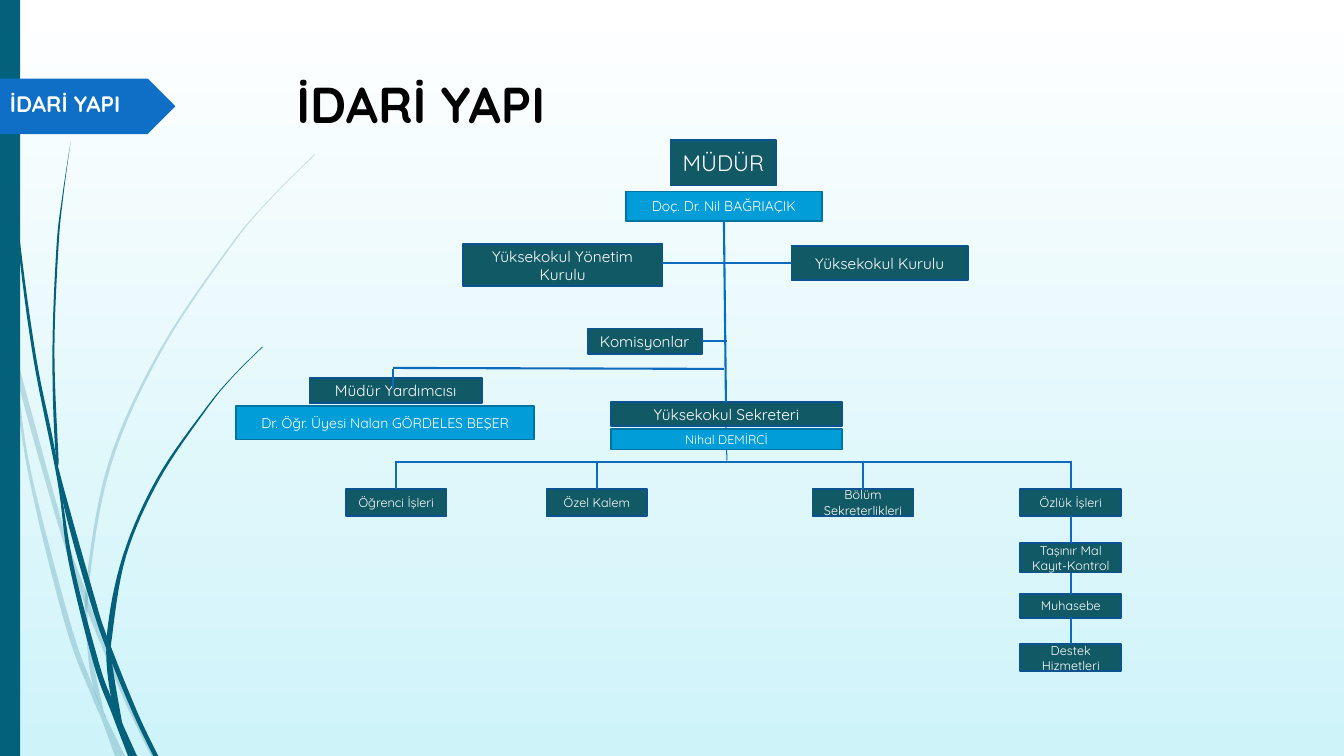
from lxml import etree
from pptx import Presentation
from pptx.dml.color import RGBColor
from pptx.enum.shapes import MSO_CONNECTOR, MSO_SHAPE
from pptx.enum.text import MSO_ANCHOR, PP_ALIGN
from pptx.oxml.ns import qn
from pptx.util import Inches, Pt

RECT, TAG = MSO_SHAPE.RECTANGLE, MSO_SHAPE.PENTAGON
STRAIGHT = MSO_CONNECTOR.STRAIGHT
MIDDLE, CENTER = MSO_ANCHOR.MIDDLE, PP_ALIGN.CENTER
FONT = "Quicksand"
WHITE = RGBColor(0xFF, 0xFF, 0xFF)
BLACK = RGBColor(0x00, 0x00, 0x00)
PALE_BLUE = RGBColor(0xCE, 0xF3, 0xF9)
TEAL = RGBColor(0x04, 0x61, 0x7B)
TAG_BLUE = RGBColor(0x0F, 0x6F, 0xC6)
UNIT_FILL = RGBColor(0x11, 0x59, 0x64)
UNIT_LINE = RGBColor(0x0B, 0x52, 0x92)
NAME_FILL = RGBColor(0x00, 0x9D, 0xD9)
NAME_LINE = RGBColor(0x00, 0x74, 0xA1)
TRUNK = RGBColor(0x00, 0x70, 0xC0)
BRANCH = RGBColor(0x0E, 0x6A, 0xBD)


def smooth(points, steps=8):
    """Return points of a Catmull-Rom curve through the given points, in EMU."""
    padded = [points[0], *points, points[-1]]
    curve = []
    for a, b, c, d in zip(padded, padded[1:], padded[2:], padded[3:]):
        for i in range(steps):
            t = i / steps
            curve.append(tuple(Inches(
                b[k] + t * (c[k] - a[k]) / 2
                + t * t * (2 * a[k] - 5 * b[k] + 4 * c[k] - d[k]) / 2
                + t ** 3 * (3 * b[k] - a[k] - 3 * c[k] + d[k]) / 2) for k in (0, 1)))
    return curve + [tuple(Inches(v) for v in points[-1])]


def add_box(kind, left, top, width, height, fill, line=None, text="", size=11):
    sp = slide.shapes.add_shape(kind, Inches(left), Inches(top), Inches(width), Inches(height))
    sp.shadow.inherit = False
    sp.fill.solid()
    sp.fill.fore_color.rgb = fill
    if line is None:
        sp.line.fill.background()
    else:
        sp.line.color.rgb = line
        sp.line.width = Pt(1.25)
    if text:
        tf = sp.text_frame
        tf.word_wrap = True
        tf.vertical_anchor = MIDDLE
        p = tf.paragraphs[0]
        p.text = text
        p.alignment = CENTER
        p.font.name, p.font.size, p.font.color.rgb = FONT, Pt(size), WHITE


prs = Presentation()
prs.slide_width, prs.slide_height = Inches(13.33), Inches(7.5)
slide = prs.slides.add_slide(prs.slide_layouts[6])

bg = slide.background.fill
bg.gradient()
bg.gradient_angle = 270
for stop, color in zip(bg.gradient_stops, (WHITE, PALE_BLUE)):
    stop.color.rgb = color

# Grass blades: opacity in percent, then the left and right edge from top to bottom
blades = [
    (20, [(0.14, 3.45), (0.17, 3.76), (0.58, 5.22), (0.84, 5.99), (0.88, 6.1), (1.23, 6.94),
          (1.5, 7.5)],
     [(0.14, 3.45), (0.62, 5.2), (0.85, 5.86), (0.92, 6.07), (1.27, 6.92), (1.55, 7.5)]),
    (20, [(0, 2.99), (0.1, 3.44), (0.28, 4.7), (0.65, 6.21), (0.92, 6.93), (1.01, 7.14),
          (1.14, 7.5)],
     [(0, 2.82), (0.09, 3.22), (0.17, 3.76), (0.31, 4.69), (0.7, 6.19), (0.93, 6.83),
      (1.05, 7.11), (1.24, 7.5)]),
    (20, [(3.12, 1.53), (2.68, 1.97), (2.28, 2.44), (1.58, 3.48), (1.07, 4.61), (0.85, 5.84),
          (0.87, 6.46), (0.93, 6.83), (1.05, 7.11)],
     [(3.12, 1.54), (2.68, 1.98), (2.29, 2.45), (1.6, 3.49), (1.1, 4.62), (0.88, 5.84),
      (0.91, 6.46), (1.03, 7.06), (1.05, 7.11)]),
    (100, [(0.03, 0), (0.04, 0.48), (0.07, 1.1), (0.17, 2.33), (0.33, 3.55), (0.57, 4.77),
           (0.68, 5.57), (0.93, 6.59), (1.11, 7.08), (1.27, 7.5)],
     [(0.04, 0), (0.05, 0.48), (0.08, 1.09), (0.19, 2.32), (0.36, 3.55), (0.55, 4.49),
      (0.72, 5.56), (0.98, 6.57), (1.1, 6.91), (1.22, 7.19), (1.36, 7.5)]),
    (100, [(0.7, 1.41), (0.62, 1.93), (0.56, 2.45), (0.52, 3.49), (0.55, 4.49), (0.64, 5.05),
           (0.88, 5.92), (1.06, 6.45), (1.32, 7.08), (1.52, 7.5)],
     [(0.7, 1.41), (0.63, 1.93), (0.58, 2.45), (0.54, 3.49), (0.58, 4.53), (0.6, 4.72),
      (0.93, 5.9), (1.06, 6.31), (1.36, 7.06), (1.57, 7.5)]),
    (100, [(2.6, 3.44), (2.31, 3.73), (2.04, 4.05), (1.56, 4.74), (1.22, 5.51), (1.06, 6.31),
           (1.1, 6.91), (1.22, 7.19)],
     [(2.61, 3.44), (2.31, 3.74), (2.05, 4.06), (1.58, 4.76), (1.25, 5.52), (1.11, 6.33),
      (1.11, 6.56), (1.21, 7.16), (1.22, 7.19)]),
]
for opacity, left_edge, right_edge in blades:
    outline = smooth(left_edge) + smooth(right_edge)[::-1]
    builder = slide.shapes.build_freeform(*outline[0])
    builder.add_line_segments(outline[1:], close=True)
    sp = builder.convert_to_shape()
    sp.shadow.inherit = False
    sp.fill.solid()
    sp.fill.fore_color.rgb = TEAL
    sp.line.fill.background()
    if opacity < 100:
        rgb = sp.fill._xPr.find(qn("a:solidFill")).find(qn("a:srgbClr"))
        etree.SubElement(rgb, qn("a:alpha")).set("val", str(opacity * 1000))

add_box(RECT, 0, 0, 0.2, 7.5, TEAL)
add_box(TAG, 0, 0.78, 1.74, 0.55, TAG_BLUE)

headings = [(2.84, 0.68, 9.75, 1.4, 36, BLACK), (0, 0.85, 1.69, 0.37, 16, WHITE)]
for left, top, width, height, size, color in headings:
    sp = slide.shapes.add_textbox(Inches(left), Inches(top), Inches(width), Inches(height))
    sp.text_frame.word_wrap = True
    p = sp.text_frame.paragraphs[0]
    p.text = "İDARİ YAPI"
    p.font.name, p.font.size, p.font.bold, p.font.color.rgb = FONT, Pt(size), True, color

units = [
    (6.65, 1.39, 1.05, 0.45, "MÜDÜR", 16),
    (4.59, 2.42, 1.98, 0.42, "Yüksekokul Yönetim Kurulu", 11),
    (7.85, 2.44, 1.75, 0.34, "Yüksekokul Kurulu", 11),
    (5.83, 3.26, 1.13, 0.25, "Komisyonlar", 11),
    (3.07, 3.75, 1.71, 0.25, "Müdür Yardımcısı", 11),
    (6.06, 3.99, 2.29, 0.24, "Yüksekokul Sekreteri", 11),
    (3.43, 4.85, 1, 0.27, "Öğrenci İşleri", 9),
    (5.42, 4.85, 1, 0.27, "Özel Kalem", 9),
    (8.06, 4.85, 1, 0.27, "Bölüm Sekreterlikleri", 9),
    (10.12, 4.85, 1, 0.27, "Özlük İşleri", 9),
    (10.12, 5.39, 1, 0.29, "Taşınır Mal Kayıt-Kontrol", 9),
    (10.12, 5.89, 1, 0.24, "Muhasebe", 9),
    (10.12, 6.39, 1, 0.27, "Destek Hizmetleri", 9),
]
for left, top, width, height, text, size in units:
    add_box(RECT, left, top, width, height, UNIT_FILL, UNIT_LINE, text, size)

links = [
    (7.18, 2.19, 7.2, 3.99, TRUNK, 1.5),
    (6.57, 2.61, 7.85, 2.61, BRANCH, 1.5),
    (6.96, 3.38, 7.21, 3.38, BRANCH, 1.5),
    (3.9, 3.65, 7.18, 3.66, BRANCH, 1.5),
    (3.9, 3.66, 3.9, 3.86, BRANCH, 1.5),
    (7.2, 4.23, 7.21, 4.57, BRANCH, 0.75),
    (3.93, 4.58, 10.62, 4.58, BRANCH, 1.5),
]
links += [(x, 4.57, x, 4.85, BRANCH, 1.5) for x in (3.93, 5.92, 8.56, 10.62)]
links += [(10.62, y1, 10.62, y2, BRANCH, 1.5)
          for y1, y2 in ((5.12, 5.39), (5.68, 5.89), (6.13, 6.39))]
for x1, y1, x2, y2, color, width in links:
    link = slide.shapes.add_connector(STRAIGHT, Inches(x1), Inches(y1), Inches(x2), Inches(y2))
    link.line.color.rgb = color
    link.line.width = Pt(width)
    etree.SubElement(link._element.spPr, qn("a:effectLst"))

names = [
    (6.21, 1.9, 1.94, 0.29, "Doç. Dr. Nil BAĞRIAÇIK", 10),
    (2.34, 4.03, 2.96, 0.33, "Dr. Öğr. Üyesi Nalan GÖRDELES BEŞER", 10),
    (6.06, 4.26, 2.29, 0.2, "Nihal DEMİRCİ", 9),
]
for left, top, width, height, text, size in names:
    add_box(RECT, left, top, width, height, NAME_FILL, NAME_LINE, text, size)

prs.save("out.pptx")
